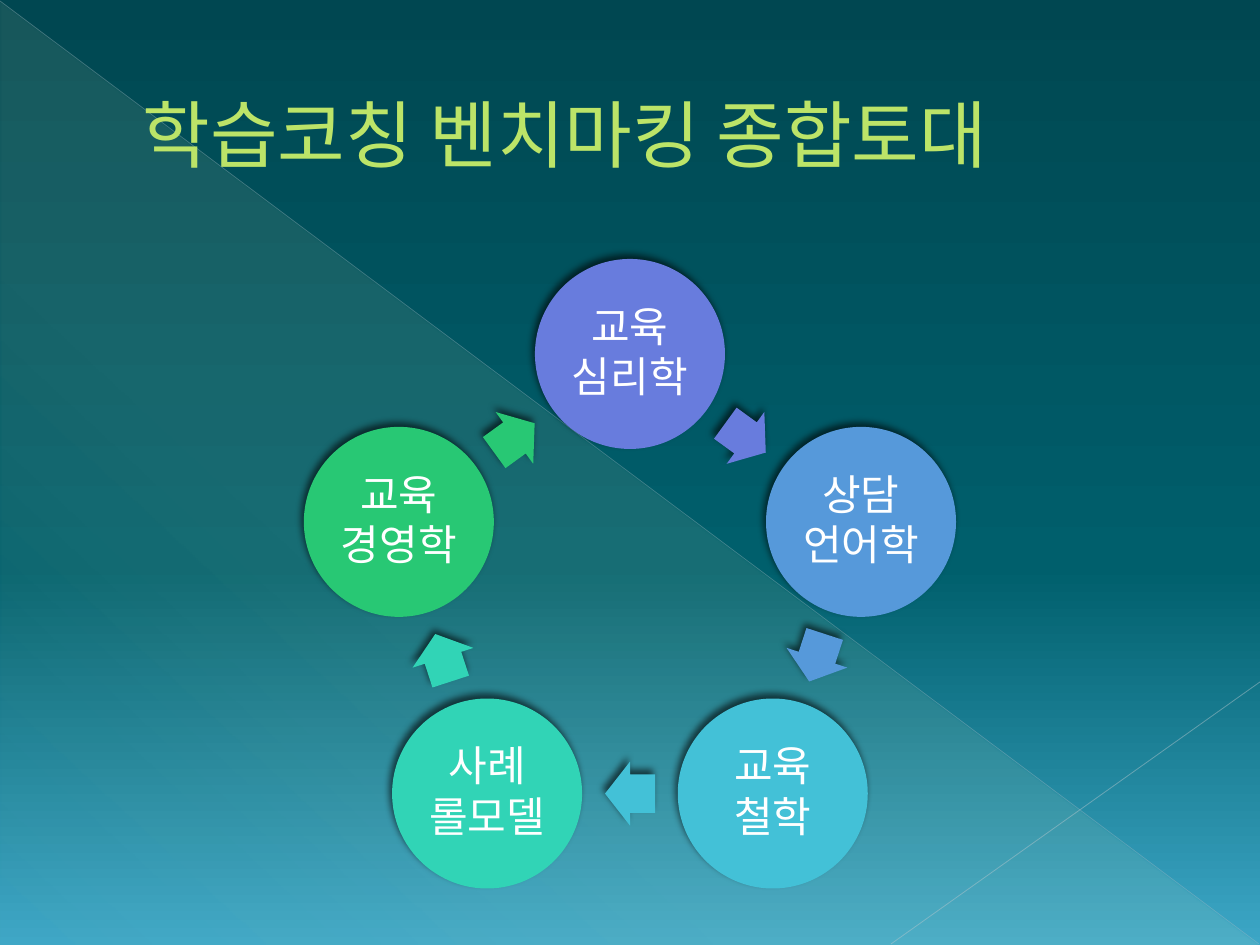
from dataclasses import dataclass
from math import cos, radians, sin

from pptx import Presentation
from pptx.dml.color import RGBColor
from pptx.enum.shapes import MSO_CONNECTOR, MSO_SHAPE
from pptx.enum.text import MSO_ANCHOR, PP_ALIGN
from pptx.oxml import parse_xml
from pptx.oxml.ns import nsdecls, qn
from pptx.util import Pt

PX = 914400 // 126  # EMU per px
WIDTH, HEIGHT = 1260, 945
TITLE_ONLY = 5
STRAIGHT = MSO_CONNECTOR.STRAIGHT
OVAL, ARROW, TRIANGLE = MSO_SHAPE.OVAL, MSO_SHAPE.RIGHT_ARROW, MSO_SHAPE.RIGHT_TRIANGLE
MIDDLE = MSO_ANCHOR.MIDDLE
CENTER, LEFT = PP_ALIGN.CENTER, PP_ALIGN.LEFT
FONT = "TeX Gyre Adventor"

WHITE = RGBColor(0xFF, 0xFF, 0xFF)
LIME = RGBColor(0xBC, 0xE4, 0x68)
OLIVE = RGBColor(0x6F, 0x88, 0x25)
DEEP_TEAL = RGBColor(0x00, 0x47, 0x51)
TEAL = RGBColor(0x00, 0x5F, 0x6C)
SKY = RGBColor(0x3C, 0xA6, 0xC6)
CREAM = RGBColor(0xFB, 0xFE, 0xC6)
LONG_LINE = RGBColor(0xAD, 0xC2, 0xC9)
SHORT_LINE = RGBColor(0xB7, 0xC8, 0xCE)
VIOLET = RGBColor(0x68, 0x7C, 0xDD)
BLUE = RGBColor(0x56, 0x99, 0xDA)
CYAN = RGBColor(0x43, 0xC1, 0xD7)
MINT = RGBColor(0x31, 0xD4, 0xB6)
GREEN = RGBColor(0x28, 0xC8, 0x74)

CYCLE_X, CYCLE_Y, RADIUS = 630, 597, 243
DIAMETER = 190
ARROW_W, ARROW_H = 50, 64


@dataclass
class Stop:
    percent: int
    color: RGBColor
    alpha: int = 100


@dataclass
class Line:
    x1: int
    y1: int
    x2: int
    y2: int
    color: RGBColor
    width: float
    alpha: int


@dataclass
class Node:
    text: str
    color: RGBColor


BACKGROUND = [Stop(0, DEEP_TEAL), Stop(60, TEAL), Stop(100, SKY)]
GLOW = [Stop(0, CREAM, 10), Stop(70, CREAM, 8), Stop(100, CREAM, 1)]
LINES = [
    Line(0, 1, 1259, 944, LONG_LINE, 0.39, 35),
    Line(1260, 682, 891, 944, SHORT_LINE, 0.47, 45),
]
NODES = [
    Node("교육\n심리학", VIOLET),
    Node("상담\n언어학", BLUE),
    Node("교육\n철학", CYAN),
    Node("사례\n롤모델", MINT),
    Node("교육\n경영학", GREEN),
]


def alpha_xml(percent: int) -> str:
    return f'<a:alpha {nsdecls("a")} val="{percent * 1000}"/>'


def set_gradient(fill, element, stops: list[Stop], angle: int) -> None:
    """Fill with any number of stops; the angle runs counterclockwise."""
    fill.gradient()
    fill.gradient_angle = angle
    stop_list = next(element.iter(qn("a:gsLst")))
    for old in list(stop_list):
        stop_list.remove(old)
    for stop in stops:
        stop_list.append(parse_xml(
            f'<a:gs {nsdecls("a")} pos="{stop.percent * 1000}">'
            f'<a:srgbClr val="{stop.color}">{alpha_xml(stop.alpha)}</a:srgbClr></a:gs>'))


def add_line(shapes, line: Line) -> None:
    s = shapes.add_connector(
        STRAIGHT, line.x1 * PX, line.y1 * PX, line.x2 * PX, line.y2 * PX)
    s.line.width = Pt(line.width)
    s.line.color.rgb = line.color
    color = next(s.line._get_or_add_ln().iter(qn("a:srgbClr")))
    color.append(parse_xml(alpha_xml(line.alpha)))
    s._element.spPr.append(parse_xml(f'<a:effectLst {nsdecls("a")}/>'))


def add_centered(shapes, kind, x: float, y: float, w: int, h: int, color: RGBColor):
    """Add a borderless shape around (x, y) with a soft shadow at its upper left."""
    s = shapes.add_shape(
        kind, round((x - w / 2) * PX), round((y - h / 2) * PX), w * PX, h * PX)
    s.fill.solid()
    s.fill.fore_color.rgb = color
    s.line.fill.background()
    s.shadow.inherit = False
    s._element.spPr.find(qn("a:effectLst")).append(parse_xml(
        f'<a:outerShdw {nsdecls("a")} blurRad="{Pt(4)}" dist="{Pt(3)}" '
        f'dir="{245 * 60000}" algn="ctr" rotWithShape="0">'
        f'<a:srgbClr val="000000">{alpha_xml(60)}</a:srgbClr></a:outerShdw>'))
    return s


def format_run(r, size: int, color: RGBColor) -> None:
    r.font.name = FONT
    r.font.size = Pt(size)
    r.font.color.rgb = color


def cycle_point(index: int) -> tuple[float, float]:
    angle = radians(360 / len(NODES) * index - 90)
    return CYCLE_X + RADIUS * cos(angle), CYCLE_Y + RADIUS * sin(angle)


def add_node(shapes, index: int, node: Node) -> None:
    """Add a circle and the arrow that leads to the next one."""
    x, y = cycle_point(index)
    s = add_centered(shapes, OVAL, x, y, DIAMETER, DIAMETER, node.color)
    tf = s.text_frame
    tf.text = node.text
    tf.word_wrap = False
    tf.vertical_anchor = MIDDLE
    tf.margin_left = tf.margin_right = tf.margin_top = tf.margin_bottom = 4 * PX
    for p in tf.paragraphs:
        p.alignment = CENTER
        p.line_spacing = 0.9
        p.space_after = Pt(3)
        format_run(p.runs[0], 24, WHITE)

    next_x, next_y = cycle_point(index + 1)
    arrow = add_centered(shapes, ARROW, (x + next_x) / 2, (y + next_y) / 2,
                         ARROW_W, ARROW_H, node.color)
    arrow.adjustments[0], arrow.adjustments[1] = 0.6, 0.5
    arrow.rotation = 36 + 360 / len(NODES) * index


def format_title(title) -> None:
    title.left, title.top, title.width, title.height = (
        63 * PX, 37 * PX, 1134 * PX, 193 * PX)
    tf = title.text_frame
    tf.text = "학습코칭 벤치마킹 종합토대"
    tf.word_wrap = True
    tf.vertical_anchor = MIDDLE
    p = tf.paragraphs[0]
    p.alignment = LEFT
    p._p.get_or_add_pPr().set("marL", str(67 * PX))
    r = p.runs[0]
    format_run(r, 42, LIME)
    r._r.get_or_add_rPr().insert(0, parse_xml(
        f'<a:ln {nsdecls("a")} w="{Pt(0.5)}"><a:solidFill>'
        f'<a:srgbClr val="{OLIVE}"/></a:solidFill></a:ln>'))


def main() -> None:
    prs = Presentation()
    prs.slide_width, prs.slide_height = WIDTH * PX, HEIGHT * PX
    slide = prs.slides.add_slide(prs.slide_layouts[TITLE_ONLY])
    shapes = slide.shapes
    set_gradient(slide.background.fill, slide._element, BACKGROUND, 270)

    glow = shapes.add_shape(TRIANGLE, 1 * PX, 2 * PX, 1258 * PX, 943 * PX)
    set_gradient(glow.fill, glow._element, GLOW, 227)
    glow.line.fill.background()
    glow.shadow.inherit = False
    for line in LINES:
        add_line(shapes, line)

    title = shapes.title
    format_title(title)
    shapes._spTree.append(title._element)  # above the backdrop
    for index, node in enumerate(NODES):
        add_node(shapes, index, node)
    prs.save("out.pptx")


if __name__ == "__main__":
    main()
